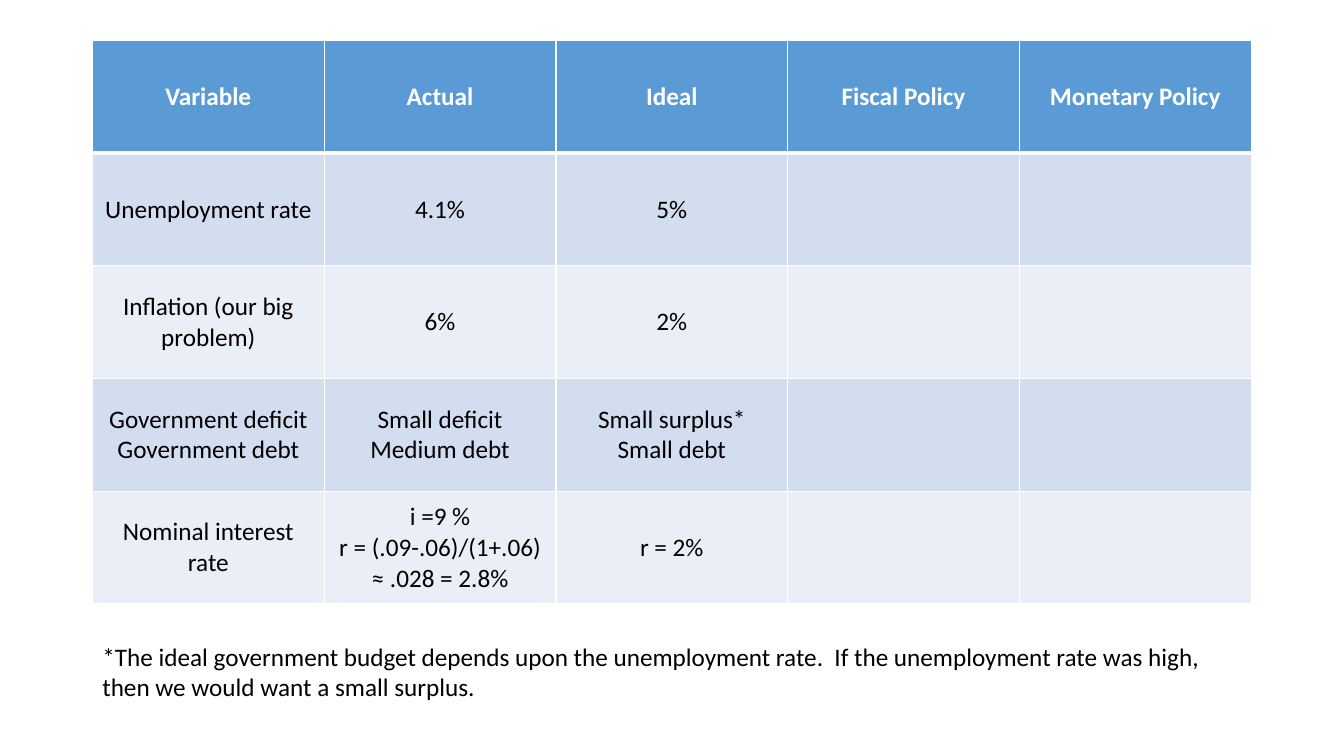
from lxml.etree import SubElement
from pptx import Presentation
from pptx.dml.color import RGBColor
from pptx.enum.text import MSO_ANCHOR as Anchor, PP_ALIGN as Align
from pptx.oxml.ns import qn
from pptx.util import Cm, Pt

FONT = "Calibri"
BLACK, WHITE = "000000", "FFFFFF"
HEADER_FILL = "5B9BD5"
BAND_FILLS = ("D2DEEF", "EAEFF7")

LEFT, TABLE_TOP, NOTE_TOP = Cm(2.33), Cm(1.02), Cm(16.03)
COLUMN_WIDTH, ROW_HEIGHT = Cm(5.84), Cm(2.84)

# Each cell is a list of paragraphs separated by line ends.
POLICY_ROWS = [
    ["Variable", "Actual", "Ideal", "Fiscal Policy", "Monetary Policy"],
    ["Unemployment rate", "4.1%", "5%", "", ""],
    ["Inflation (our big problem)", "6%", "2%", "", ""],
    ["Government deficit Government debt", "Small deficit\nMedium debt",
     "Small surplus*\nSmall debt", "", ""],
    ["Nominal interest rate", "i =9 %\nr = (.09-.06)/(1+.06) ≈ .028 = 2.8%",
     "r = 2%", "", ""],
]
NOTE = ("*The ideal government budget depends upon the unemployment rate.  "
        "If the unemployment rate was high, then we would want a small surplus.")


def color(hex_value):
    return RGBColor.from_string(hex_value)


def write_text(text_frame, text, hex_color=BLACK, bold=False, align=Align.LEFT):
    """Write one paragraph for each line of the text."""
    for index, line in enumerate(text.split("\n")):
        paragraph = text_frame.paragraphs[0] if index == 0 else text_frame.add_paragraph()
        paragraph.alignment = align
        run = paragraph.add_run()
        run.text = line
        run.font.name = FONT
        run.font.size = Pt(18)
        run.font.bold = bold
        run.font.color.rgb = color(hex_color)


def set_borders(cell, top, bottom):
    """Draw white borders; top and bottom are widths in points."""
    properties = cell._tc.get_or_add_tcPr()
    for tag, width in (("a:lnL", 1), ("a:lnR", 1), ("a:lnT", top), ("a:lnB", bottom)):
        line = SubElement(properties, qn(tag), w=str(Pt(width)))
        fill = SubElement(line, qn("a:solidFill"))
        SubElement(fill, qn("a:srgbClr"), val=WHITE)


def style_cell(cell, row_index):
    is_header = row_index == 0
    set_borders(cell, top=3 if row_index == 1 else 1, bottom=3 if is_header else 1)
    cell.fill.solid()
    cell.fill.fore_color.rgb = color(
        HEADER_FILL if is_header else BAND_FILLS[(row_index - 1) % 2])
    cell.vertical_anchor = Anchor.MIDDLE


def add_policy_table(slide):
    row_count, column_count = len(POLICY_ROWS), len(POLICY_ROWS[0])
    table = slide.shapes.add_table(
        row_count, column_count, LEFT, TABLE_TOP,
        COLUMN_WIDTH * column_count, ROW_HEIGHT * row_count).table
    for column in table.columns:
        column.width = COLUMN_WIDTH
    for row_index, texts in enumerate(POLICY_ROWS):
        table.rows[row_index].height = ROW_HEIGHT
        is_header = row_index == 0
        for column_index, text in enumerate(texts):
            cell = table.cell(row_index, column_index)
            style_cell(cell, row_index)
            if text:
                write_text(cell.text_frame, text, WHITE if is_header else BLACK,
                           is_header, Align.CENTER)


def add_note(slide):
    box = slide.shapes.add_textbox(LEFT, NOTE_TOP, Cm(29.2), Cm(1.8))
    box.text_frame.word_wrap = True
    write_text(box.text_frame, NOTE)


def main():
    presentation = Presentation()
    presentation.slide_width = Cm(33.87)
    presentation.slide_height = Cm(19.05)
    slide = presentation.slides.add_slide(presentation.slide_layouts[6])
    add_policy_table(slide)
    add_note(slide)
    presentation.save("out.pptx")


if __name__ == "__main__":
    main()
